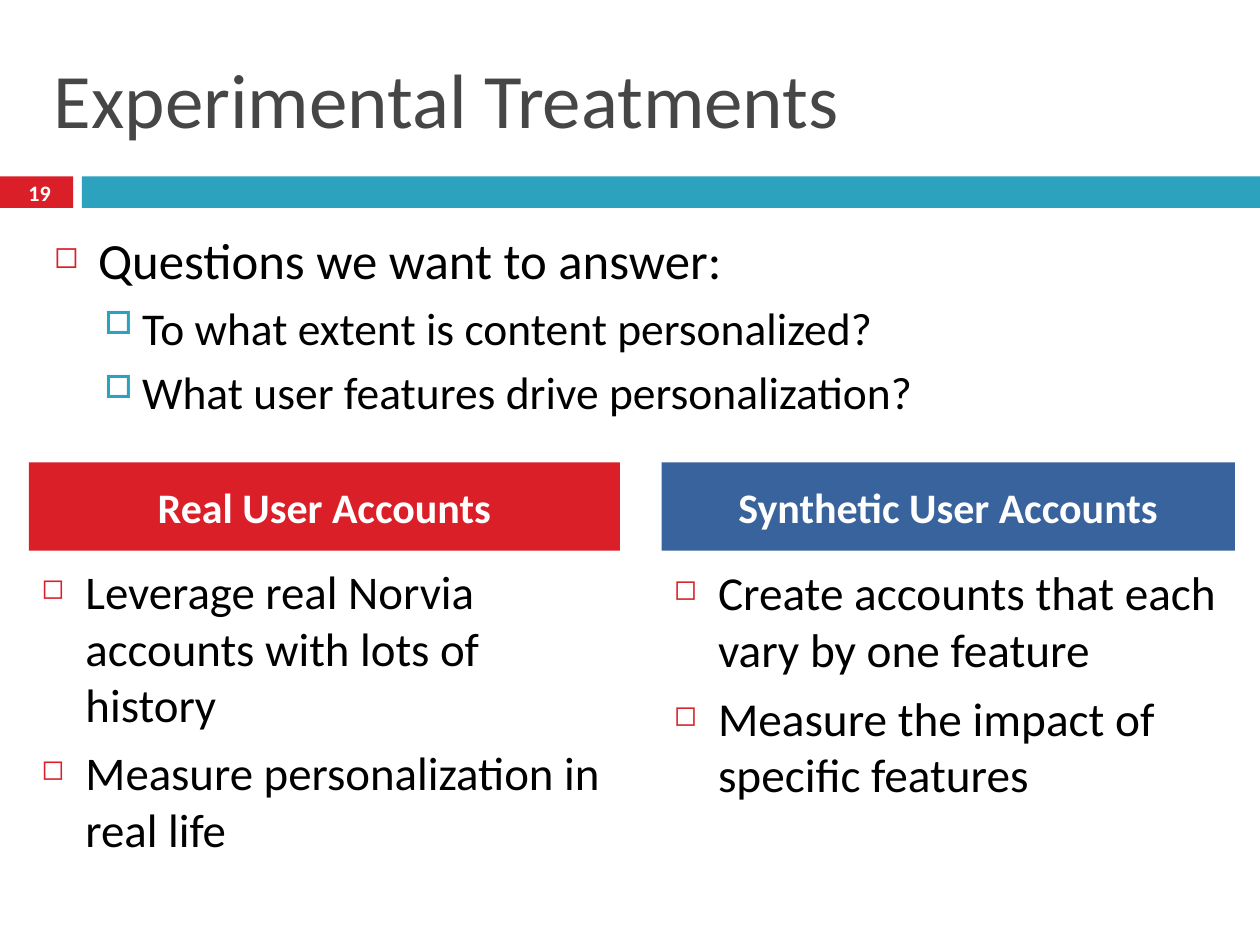
from lxml.etree import SubElement
from pptx import Presentation
from pptx.dml.color import RGBColor
from pptx.enum.shapes import MSO_SHAPE as SHAPE
from pptx.enum.text import MSO_ANCHOR as ANCHOR, PP_ALIGN as ALIGN
from pptx.oxml.ns import qn
from pptx.util import Inches, Pt

FONT = "Calibri"
RED = RGBColor(0xDA, 0x1F, 0x28)
TEAL = RGBColor(0x2D, 0xA2, 0xBF)
BLUE = RGBColor(0x39, 0x63, 0x9D)
GRAY = RGBColor(0x46, 0x46, 0x46)
BLACK = RGBColor(0, 0, 0)
WHITE = RGBColor(0xFF, 0xFF, 0xFF)

# Content
TITLE = "Experimental Treatments"
PAGE = "19"
QUESTIONS = [  # level, text, size
    (0, "Questions we want to answer:", 29),
    (1, "To what extent is content personalized?", 26),
    (1, "What user features drive personalization?", 26),
]
COLUMNS = [  # left, width, colour, heading, text size, points
    (0.23, 4.69, RED, "Real User Accounts", 26.8,
     ["Leverage real Norvia accounts with lots of history",
      "Measure personalization in real life"]),
    (5.25, 4.55, BLUE, "Synthetic User Accounts", 27,
     ["Create accounts that each vary by one feature",
      "Measure the impact of specific features"]),
]
# Per level: left margin, hanging indent, space before, bullet, colour, percent
LEVELS = [
    (0.35, 0.35, 7, "◻", RED, 60),
    (0.7, 0.3, 5.5, "□", TEAL, 70),
]

BAR_TOP, BAR_H = 1.4, 0.25
HEAD_TOP, HEAD_H = 3.67, 0.7
LIST_TOP, LIST_H = 4.42, 2.8


def add_bar(slide, x, y, w, h, color):
    sp = slide.shapes.add_shape(
        SHAPE.RECTANGLE, Inches(x), Inches(y), Inches(w), Inches(h))
    sp.shadow.inherit = False
    sp.fill.solid()
    sp.fill.fore_color.rgb = color
    sp.line.fill.background()
    return sp


def add_box(slide, x, y, w, h):
    sp = slide.shapes.add_textbox(Inches(x), Inches(y), Inches(w), Inches(h))
    sp.text_frame.word_wrap = True
    return sp


def add_run(p, text, size, color, bold=False):
    r = p.add_run()
    r.text = text
    r.font.name = FONT
    r.font.size = Pt(size)
    r.font.bold = bold
    r.font.color.rgb = color


def write_line(sp, text, size, color, bold=False, align=ALIGN.CENTER, before=0):
    tf = sp.text_frame
    tf.vertical_anchor = ANCHOR.MIDDLE
    p = tf.paragraphs[0]
    p.alignment = align
    p.space_before = Pt(before)
    add_run(p, text, size, color, bold)


def set_bullet(p, level):
    margin, hang, before, char, color, percent = LEVELS[level]
    p.level = level
    p.space_before = Pt(before)
    pPr = p._p.get_or_add_pPr()
    pPr.set("marL", str(Inches(margin)))
    pPr.set("indent", str(-Inches(hang)))
    clr = SubElement(pPr, qn("a:buClr"))
    SubElement(clr, qn("a:srgbClr"), val=str(color))
    SubElement(pPr, qn("a:buSzPct"), val=str(percent * 1000))
    SubElement(pPr, qn("a:buChar"), char=char)


def write_list(sp, items):
    tf = sp.text_frame
    for i, (level, text, size) in enumerate(items):
        p = tf.add_paragraph() if i else tf.paragraphs[0]
        set_bullet(p, level)
        add_run(p, text, size, BLACK)


def main():
    prs = Presentation()
    prs.slide_width, prs.slide_height = Inches(10), Inches(7.5)
    slide = prs.slides.add_slide(prs.slide_layouts[6])

    # Title and divider with the page number
    add_bar(slide, 0, BAR_TOP, 0.58, BAR_H, RED)
    add_bar(slide, 0.65, BAR_TOP, 9.35, BAR_H, TEAL)
    write_line(add_box(slide, 0.33, 0.3, 9.17, 0.95), TITLE, 44, GRAY,
               align=ALIGN.LEFT)
    write_line(add_box(slide, 0, 1.38, 0.63, 0.29), PAGE, 12.6, WHITE, True)

    # Questions
    write_list(add_box(slide, 0.33, 1.77, 9.36, 1.68), QUESTIONS)

    # Two treatments side by side
    for x, w, color, heading, size, points in COLUMNS:
        head = add_bar(slide, x, HEAD_TOP, w, HEAD_H, color)
        write_line(head, heading, 24, WHITE, True, before=7)
        write_list(add_box(slide, x, LIST_TOP, w, LIST_H),
                   [(0, point, size) for point in points])

    prs.save("out.pptx")


if __name__ == "__main__":
    main()
